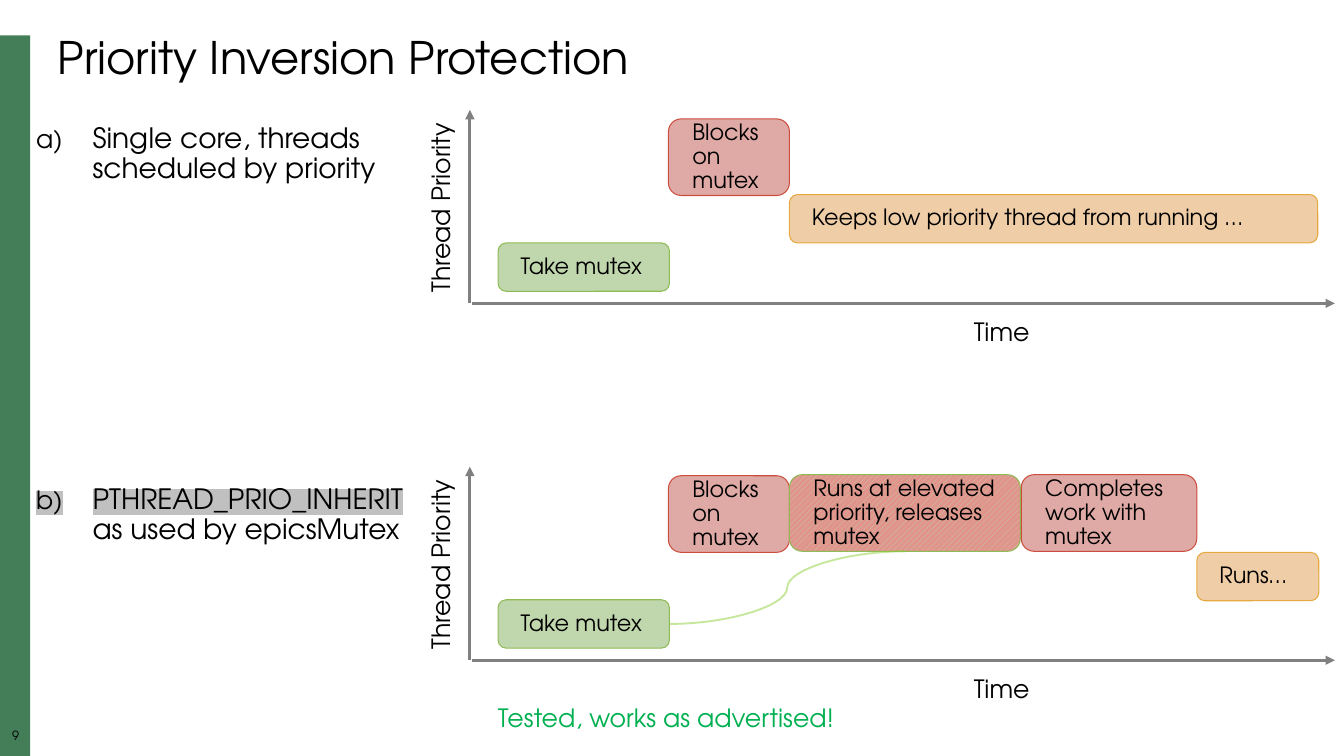
import pptx
import pptx.util
import pptx.dml.color
import pptx.enum.dml
import pptx.enum.shapes
import pptx.enum.text
import pptx.oxml
import pptx.oxml.ns

PX = 9144  # 100 px to the inch
HUES = {"black": "000000", "band": "447E59", "axis": "808080", "note": "00B050",
        "low": "C0D6AC", "low line": "8FBB55", "high": "DFAAA6", "high line": "CB4D3D",
        "mid": "EFCDA7", "mid line": "E5A940", "raised": "E0948B", "curve": "8FD03A"}
NS = pptx.oxml.ns.nsdecls("a")
TOP = pptx.enum.text.MSO_ANCHOR.TOP
MID = pptx.enum.text.MSO_ANCHOR.MIDDLE
LEFT = pptx.enum.text.PP_ALIGN.LEFT
KIND = pptx.enum.shapes.MSO_SHAPE
LINK = pptx.enum.shapes.MSO_CONNECTOR


def hue(name):
    return pptx.dml.color.RGBColor.from_string(HUES[name])


def write(shape, text, size, color="black", pad=(10, 5), wrap=True, anchor=TOP, align=LEFT):
    frame = shape.text_frame
    frame.text = text
    form = {"word_wrap": wrap, "vertical_anchor": anchor,
            "margin_left": pad[0] * PX, "margin_right": pad[0] * PX,
            "margin_top": pad[1] * PX, "margin_bottom": pad[1] * PX}
    for key, value in form.items():
        setattr(frame, key, value)
    for para in frame.paragraphs:
        para.alignment, para.line_spacing = align, 0.9
        for run in para.runs:
            run.font.name, run.font.size = "TeX Gyre Adventor", pptx.util.Pt(size)
            run.font.color.rgb = hue(color)
    return frame


deck = pptx.Presentation()
deck.slide_width, deck.slide_height = 1333 * PX, 750 * PX
slide = deck.slides.add_slide(deck.slide_layouts[5])
shapes = slide.shapes

# Side band and page number
band = shapes.add_shape(KIND.RECTANGLE, 0, 35 * PX, 30 * PX, 715 * PX)
band.shadow.inherit = False
band.fill.solid()
band.fill.fore_color.rgb = hue("band")
band.line.fill.background()
page = shapes.add_textbox(0, 724 * PX, 31 * PX, 17 * PX)
write(page, "9", 9, pad=(0, 0), align=pptx.enum.text.PP_ALIGN.CENTER)

# Title
title = shapes.title
for key, value in {"left": 47, "top": 30, "width": 1250, "height": 59}.items():
    setattr(title, key, value * PX)
write(title, "Priority Inversion Protection", 32, anchor=MID)

# Lettered list, each item level with its chart
cases = shapes.add_textbox(26 * PX, 118 * PX, 412 * PX, 469 * PX)
frame = write(cases, "Single core, threads scheduled by priority\nPTHREAD_PRIO_INHERIT", 20)
for para in frame.paragraphs:
    props = para._p.get_or_add_pPr()
    props.set("marL", str(56 * PX))
    props.set("indent", str(-56 * PX))
    for tag in ('buClr %s><a:srgbClr val="000000"/></a:buClr', 'buSzPct %s val="90000"/',
                'buFont %s typeface="TeX Gyre Adventor"/', 'buAutoNum %s type="alphaLcParenR"/'):
        props.append(pptx.oxml.parse_xml("<a:" + tag % NS + ">"))
last = frame.paragraphs[1]
last.space_before = pptx.util.Pt(215)
mark = last.runs[0]
tail = last.add_run()
tail.text = " as used by epicsMutex"
for key in ("name", "size"):
    setattr(tail.font, key, getattr(mark.font, key))
tail.font.color.rgb = hue("black")
mark.font.fill._xPr.find(pptx.oxml.ns.qn("a:solidFill")).addnext(pptx.oxml.parse_xml(
    f'<a:highlight {NS}><a:srgbClr val="C0C0C0"/></a:highlight>'))

# Two charts: top edge, then bars as left, top, width, height, kind, text
START = [(494, 132, 170, 48, "low", "Take mutex"),
         (663, 9, 120, 76, "high", "Blocks on mutex")]
CHARTS = [
    (109, START + [(783, 84, 524, 48, "mid", "Keeps low priority thread from running …")]),
    (463, START + [(1187, 85, 121, 48, "mid", "Runs…"),
                   (783, 8, 229, 76, "raised", "Runs at elevated priority, releases mutex"),
                   (1013, 8, 174, 76, "high", "Completes work with mutex")]),
]
bars = {}
for top, items in CHARTS:
    base = top + 192
    for ends in ((468, base, 1324, base), (466, base, 466, top)):
        axis = shapes.add_connector(LINK.STRAIGHT, *[n * PX for n in ends])
        axis.line.color.rgb = hue("axis")
        axis.line.width = pptx.util.Pt(2.25)
        axis.line._get_or_add_ln().append(
            pptx.oxml.parse_xml(f'<a:tailEnd {NS} type="triangle"/>'))
    for x, y, w, h, kind, text in items:
        bar = shapes.add_shape(KIND.FLOWCHART_ALTERNATE_PROCESS,
                               x * PX, (top + y) * PX, w * PX, h * PX)
        bar.shadow.inherit = False
        if kind == "raised":
            bar.fill.patterned()
            bar.fill.pattern = pptx.enum.dml.MSO_PATTERN.WIDE_UPWARD_DIAGONAL
            bar.fill.fore_color.rgb, bar.fill.back_color.rgb = hue("low"), hue("raised")
        else:
            bar.fill.solid()
            bar.fill.fore_color.rgb = hue(kind)
        bar.line.color.rgb = hue("low line" if kind == "raised" else kind + " line")
        bar.line.width = pptx.util.Pt(0.75)
        write(bar, text, 16, pad=(20, 20), anchor=MID)
        bars[text] = bar
    time = shapes.add_textbox(956 * PX, (top + 203) * PX, 76 * PX, 37 * PX)
    write(time, "Time", 18, wrap=False)
    rank = shapes.add_textbox(343 * PX, (top + 77) * PX, 191 * PX, 37 * PX)
    rank.rotation = 270
    write(rank, "Thread Priority", 18, wrap=False)

# Curve from the low bar to its raised run
curve = shapes.add_connector(LINK.CURVE, 663 * PX, 619 * PX, 902 * PX, 547 * PX)
curve.begin_connect(bars["Take mutex"], 3)
curve.end_connect(bars["Runs at elevated priority, releases mutex"], 2)
curve.line.color.rgb = hue("curve")
curve.line.width = pptx.util.Pt(1.35)
tint = curve.line._get_or_add_ln().find(".//" + pptx.oxml.ns.qn("a:srgbClr"))
tint.append(pptx.oxml.parse_xml(f'<a:alpha {NS} val="50000"/>'))

# Closing note
note = shapes.add_textbox(484 * PX, 695 * PX, 359 * PX, 37 * PX)
write(note, "Tested, works as advertised!", 18, "note")

# Lines cast no shadow
for shape in shapes:
    if shape.shape_type == pptx.enum.shapes.MSO_SHAPE_TYPE.LINE:
        shape._element.spPr.append(pptx.oxml.parse_xml(f"<a:effectLst {NS}/>"))

deck.save("out.pptx")
